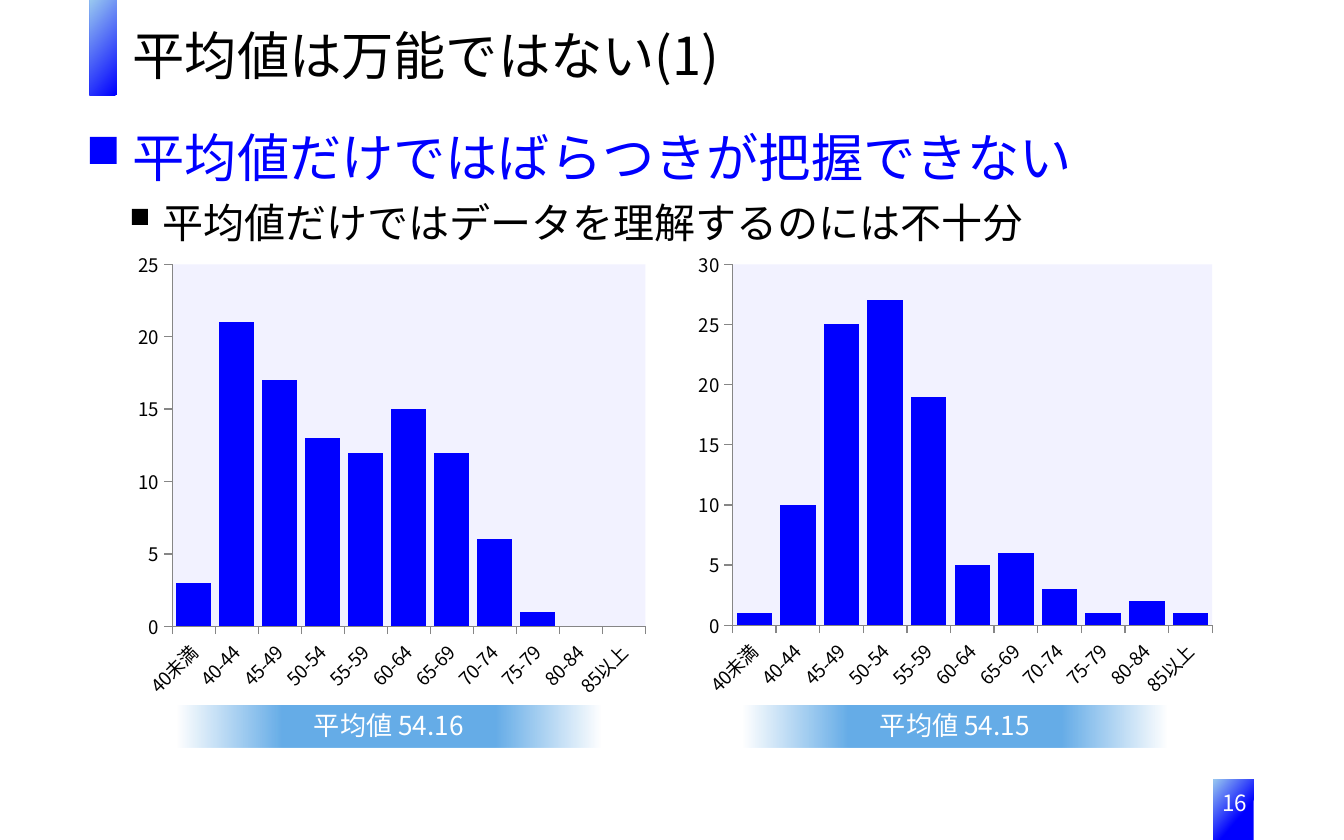
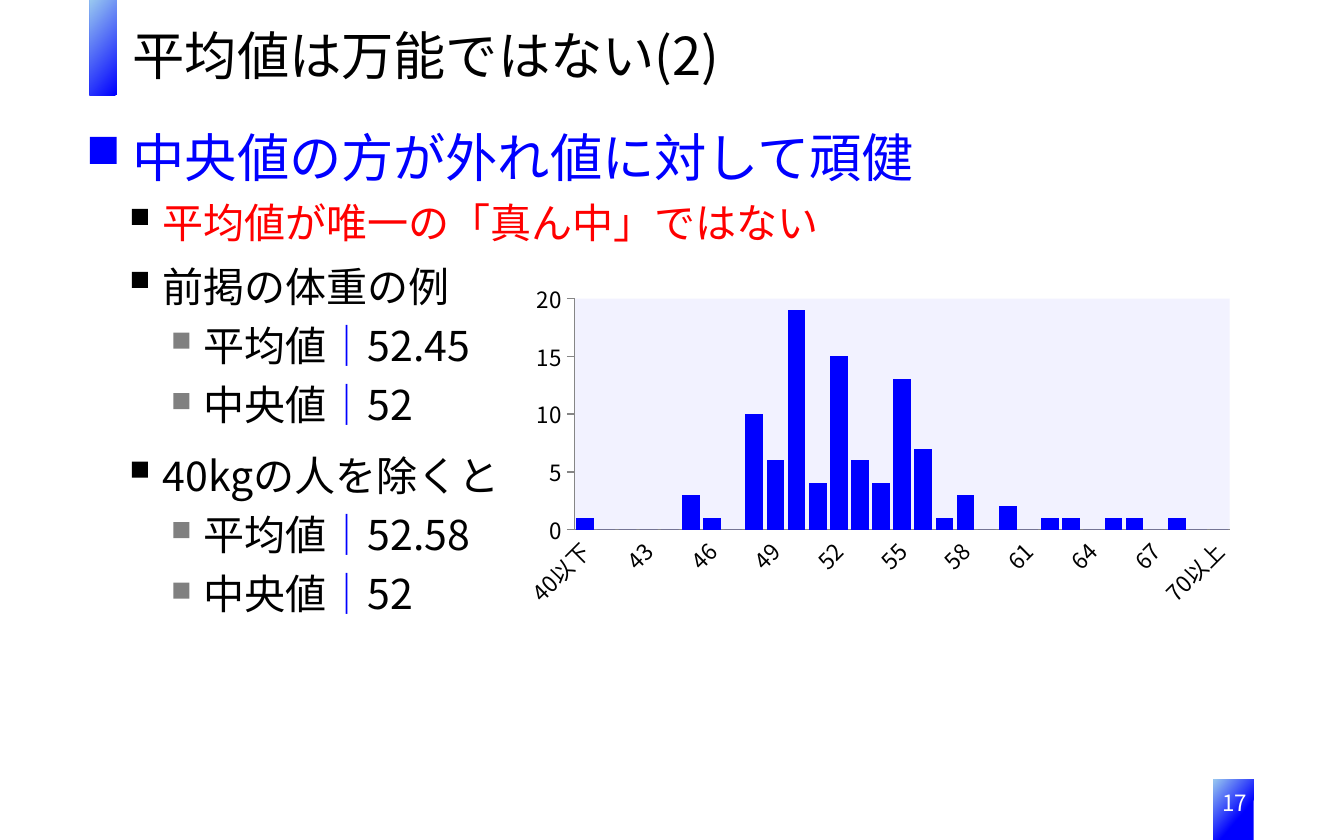
from lxml.etree import SubElement
from pptx import Presentation
from pptx.chart.data import CategoryChartData
from pptx.dml.color import RGBColor
from pptx.enum.chart import XL_CHART_TYPE, XL_TICK_MARK
from pptx.enum.shapes import MSO_SHAPE
from pptx.enum.text import MSO_ANCHOR, MSO_AUTO_SIZE, PP_ALIGN
from pptx.oxml import parse_xml
from pptx.oxml.ns import nsdecls, qn
from pptx.util import Pt

FONT = "Noto Sans CJK JP"
BLUE = RGBColor(0x00, 0x00, 0xFF)
LIGHT_BLUE = RGBColor(0x99, 0xC8, 0xF0)
BADGE_BLUE = RGBColor(0x66, 0xAD, 0xE8)
PLOT_FILL = RGBColor(0xF2, 0xF2, 0xFF)
AXIS_GRAY = RGBColor(0x86, 0x86, 0x86)
GRAY = RGBColor(0x80, 0x80, 0x80)
BLACK = RGBColor(0x00, 0x00, 0x00)
WHITE = RGBColor(0xFF, 0xFF, 0xFF)
RED = RGBColor(0xFF, 0x00, 0x00)

AGE_GROUPS = ["40未満", *(f"{age}-{age + 4}" for age in range(40, 85, 5)), "85以上"]
WIDE_SPREAD = [3, 21, 17, 13, 12, 15, 12, 6, 1, None, None]
NARROW_SPREAD = [1, 10, 25, 27, 19, 5, 6, 3, 1, 2, 1]
WEIGHTS = ["40以下", *(str(weight) for weight in range(41, 70)), "70以上"]
WEIGHT_COUNTS = [1, 0, 0, 0, 0, 3, 1, 0, 10, 6, 19, 4, 15, 6, 4, 13,
                 7, 1, 3, 0, 2, 0, 1, 1, 0, 1, 1, 0, 1, 0, 0]


def set_font(font, size, color):
    font.size = Pt(size)
    font.color.rgb = color
    font.name = FONT
    SubElement(font._rPr, qn("a:ea")).set("typeface", FONT)


def add_block(page, left, top, width, height, color=None, kind=MSO_SHAPE.RECTANGLE):
    block = page.shapes.add_shape(kind, Pt(left), Pt(top), Pt(width), Pt(height))
    block.shadow.inherit = False
    block.line.fill.background()
    if color is not None:
        block.fill.solid()
        block.fill.fore_color.rgb = color
    return block


def fill_gradient(block, stops, angle):
    marks = "".join(
        f'<a:gs pos="{position * 1000}"><a:srgbClr val="{color}">'
        f'<a:alpha val="{opacity * 1000}"/></a:srgbClr></a:gs>'
        for position, color, opacity in stops)
    gradient = parse_xml(
        f'<a:gradFill {nsdecls("a")} rotWithShape="1"><a:gsLst>{marks}</a:gsLst>'
        f'<a:lin ang="{angle * 60000}" scaled="0"/></a:gradFill>')
    block._element.spPr.find(qn("a:prstGeom")).addnext(gradient)


def add_accent(page, left, top, width, height, blue_until):
    accent = add_block(page, left, top, width, height, kind=MSO_SHAPE.ROUNDED_RECTANGLE)
    accent.adjustments[0] = 0
    fill_gradient(accent, [(blue_until, BLUE, 100), (100, LIGHT_BLUE, 100)], 220)


def add_text(page, left, top, width, height, lines, size, color=BLACK,
             align=None, spacing=None, wrap=True, grow=True):
    box = page.shapes.add_textbox(Pt(left), Pt(top), Pt(width), Pt(height))
    frame = box.text_frame
    frame.word_wrap = wrap
    if grow:
        frame.auto_size = MSO_AUTO_SIZE.SHAPE_TO_FIT_TEXT
    for index, line in enumerate(lines):
        para = frame.paragraphs[0] if index == 0 else frame.add_paragraph()
        para.alignment = align
        para.line_spacing = spacing
        set_font(para.font, size, color)
        for text, span_color in line:
            span = para.add_run()
            span.text = text
            if span_color != color:
                span.font.color.rgb = span_color
    return box


def add_label(page, left, top, width, height, text, size, color=BLACK, **options):
    return add_text(page, left, top, width, height, [[(text, color)]], size, color, **options)


def add_page(deck, title, number):
    page = deck.slides.add_slide(deck.slide_layouts[6])
    add_accent(page, 650, 417.6, 21.6, 32.4, 36)
    add_label(page, 634.3, 419, 54, 23.8, str(number), 12, WHITE,
              align=PP_ALIGN.CENTER, grow=False)
    add_accent(page, 48.2, 0, 14.4, 51, 0)
    heading = add_label(page, 64, 8.6, 654.5, 41, title, 28)
    heading.text_frame.vertical_anchor = MSO_ANCHOR.MIDDLE
    return page


def add_headline(page, text):
    add_block(page, 48.2, 73.4, 14.4, 14.4, BLUE)
    add_label(page, 64, 57, 656, 42.5, text, 28, BLUE, spacing=1.2)


def add_point(page, top, text, color=BLACK):
    add_block(page, 70.6, top + 14.7, 8.6, 8.6, BLACK)
    add_label(page, 80.2, top, 639, 35.3, text, 22, color, spacing=1.2)


def add_statistics(page, top, mean, median):
    rows = [("平均値", mean), ("中央値", median)]
    for index in range(len(rows)):
        add_block(page, 92.9, top + 15.5 + index * 32.4, 8.6, 8.6, GRAY)
    lines = [[(name, BLACK), ("｜", BLUE), (value, BLACK)] for name, value in rows]
    add_text(page, 102.2, top, 300, 71.3, lines, 22, spacing=1.2)


def add_mean_badge(page, left, text):
    badge = add_block(page, left, 378, 226.8, 22.3)
    fill_gradient(badge, [(0, BADGE_BLUE, 0), (25, BADGE_BLUE, 100),
                          (75, BADGE_BLUE, 100), (100, BADGE_BLUE, 0)], 0)
    add_label(page, left + 63.4, 376.6, 100, 24.5, text, 14, WHITE,
              align=PP_ALIGN.CENTER, wrap=False)


def style_plot_area(chart, inner):
    area = chart._chartSpace.find(".//" + qn("c:plotArea"))
    for layout in area.findall(qn("c:layout")):
        area.remove(layout)
    sizes = "".join(f'<c:{name} val="{value}"/>' for name, value in zip("xywh", inner))
    area.insert(0, parse_xml(
        f'<c:layout {nsdecls("c")}><c:manualLayout><c:layoutTarget val="inner"/>'
        f'<c:xMode val="edge"/><c:yMode val="edge"/>{sizes}</c:manualLayout></c:layout>'))
    area.append(parse_xml(
        f'<c:spPr {nsdecls("c", "a")}><a:solidFill><a:srgbClr val="{PLOT_FILL}"/>'
        f'</a:solidFill><a:ln><a:noFill/></a:ln></c:spPr>'))


def add_histogram(page, place, categories, counts, top_value, inner, size, gap, overlap=0):
    data = CategoryChartData()
    data.categories = categories
    data.add_series("Series 1", counts)
    chart = page.shapes.add_chart(
        XL_CHART_TYPE.COLUMN_CLUSTERED, *(Pt(length) for length in place), data).chart
    chart.has_legend = False
    chart.has_title = False
    chart.font.size = Pt(size)
    chart.font.name = "Calibri"
    chart.font.color.rgb = BLACK
    plot = chart.plots[0]
    plot.gap_width = gap
    plot.overlap = overlap
    plot.vary_by_categories = False
    bars = plot.series[0].format.fill
    bars.solid()
    bars.fore_color.rgb = BLUE
    for axis in (chart.category_axis, chart.value_axis):
        axis.has_major_gridlines = False
        axis.major_tick_mark = XL_TICK_MARK.OUTSIDE
        axis.minor_tick_mark = XL_TICK_MARK.NONE
        axis.format.line.color.rgb = AXIS_GRAY
        axis.format.line.width = Pt(0.75)
        set_font(axis.tick_labels.font, size, BLACK)
    chart.value_axis.minimum_scale = 0
    chart.value_axis.maximum_scale = top_value
    chart.value_axis.major_unit = 5
    style_plot_area(chart, inner)
    return chart


def slant_labels(axis, every):
    axis.major_tick_mark = XL_TICK_MARK.NONE
    body = axis._element.find(qn("c:txPr")).find(qn("a:bodyPr"))
    body.set("rot", "-2700000")
    body.set("vert", "horz")
    skip = parse_xml(f'<c:tickLblSkip {nsdecls("c")} val="{every}"/>')
    axis._element.find(qn("c:noMultiLvlLbl")).addprevious(skip)


def build_spread_page(deck):
    page = add_page(deck, "平均値は万能ではない(1)", 16)
    add_mean_badge(page, 95, "平均値 54.16")
    add_mean_badge(page, 398.2, "平均値 54.15")
    add_histogram(page, (65.5, 131, 322.5, 247.7), AGE_GROUPS, WIDE_SPREAD, 25,
                  (0.083, 0.043, 0.786, 0.783), 10, 23)
    add_histogram(page, (368, 131, 293.8, 247), AGE_GROUPS, NARROW_SPREAD, 30,
                  (0.083, 0.043, 0.875, 0.783), 10, 23)
    add_headline(page, "平均値だけではばらつきが把握できない")
    add_point(page, 97.2, "平均値だけではデータを理解するのには不十分")


def build_median_page(deck):
    page = add_page(deck, "平均値は万能ではない(2)", 17)
    chart = add_histogram(page, (276.5, 149, 383, 187.2), WEIGHTS, WEIGHT_COUNTS, 20,
                          (0.082, 0.059, 0.917, 0.661), 12, 19, -38)
    slant_labels(chart.category_axis, 3)
    add_headline(page, "中央値の方が外れ値に対して頑健")
    add_point(page, 97.2, "平均値が唯一の「真ん中」ではない", RED)
    add_point(page, 131, "前掲の体重の例")
    add_statistics(page, 162.7, "52.45", "52")
    add_point(page, 232.6, "40kgの人を除くと")
    add_statistics(page, 264.2, "52.58", "52")


def main():
    deck = Presentation()
    deck.slide_width = Pt(720)
    deck.slide_height = Pt(450)
    build_spread_page(deck)
    build_median_page(deck)
    deck.save("out.pptx")


if __name__ == "__main__":
    main()
